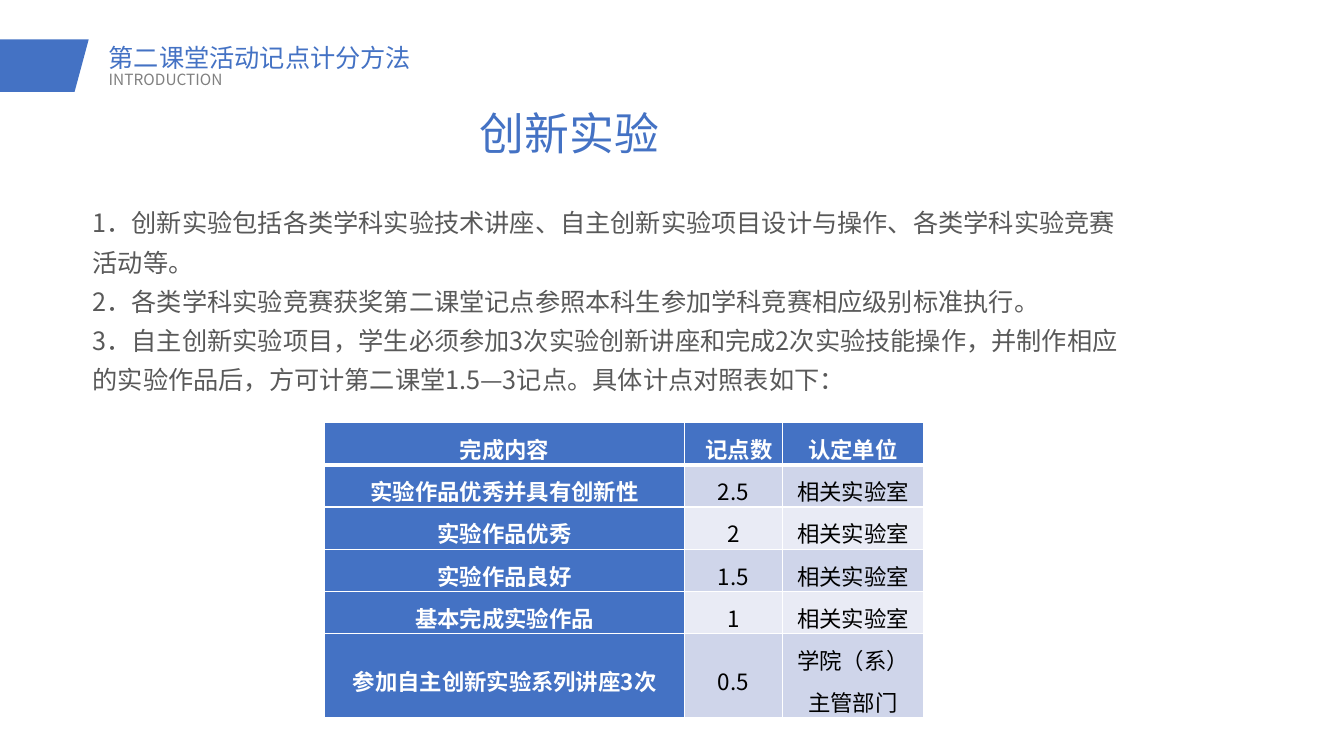
"""Build the slide on scoring points for innovation experiments."""
from lxml.etree import SubElement
from pptx import Presentation
from pptx.dml.color import RGBColor
from pptx.enum.text import MSO_ANCHOR, PP_ALIGN
from pptx.oxml.ns import qn
from pptx.util import Inches, Pt

FONT = "Noto Sans CJK SC"
BLUE, WHITE = "4472C4", "FFFFFF"


def color(code):
    """Turn a hex string into a colour."""
    return RGBColor.from_string(code)


def style(frame, size, ink, space, align=PP_ALIGN.LEFT, bold=False):
    """Format all the text in a frame."""
    for para in frame.paragraphs:
        para.alignment = align
        para.line_spacing = space
        for run in para.runs:
            run.font.size = Pt(size)
            run.font.bold = bold
            run.font.name = FONT
            run.font.color.rgb = color(ink)
            SubElement(run.font._element, qn("a:ea"), typeface=FONT)


deck = Presentation()
deck.slide_width, deck.slide_height = Inches(13.33), Inches(7.5)
slide = deck.slides.add_slide(deck.slide_layouts[6])
shapes = slide.shapes

pen = shapes.build_freeform(Inches(0), Inches(0.39), scale=1.0)
corners = [(0.88, 0.39), (0.74, 0.91), (0, 0.91)]
pen.add_line_segments([(Inches(x), Inches(y)) for x, y in corners])
flag = pen.convert_to_shape()
flag.shadow.inherit = False
flag.fill.solid()
flag.fill.fore_color.rgb = color(BLUE)
flag.line.fill.background()

rules = "\n".join([
    "1．创新实验包括各类学科实验技术讲座、自主创新实验项目设计与操作、各类学科实验竞赛活动等。",
    "2．各类学科实验竞赛获奖第二课堂记点参照本科生参加学科竞赛相应级别标准执行。",
    "3．自主创新实验项目，学生必须参加3次实验创新讲座和完成2次实验技能操作，并制作相应的实验作品后，方可计第二课堂1.5—3记点。具体计点对照表如下：",
])
texts = [
    ("第二课堂活动记点计分方法", (0.98, 0.4, 8.62, 0.47), 18, BLUE, 0.9, PP_ALIGN.LEFT, True),
    ("INTRODUCTION", (0.98, 0.67, 8.62, 0.33), 11, "808080", 0.9, PP_ALIGN.LEFT, True),
    (rules, (0.82, 1.92, 10.45, 1.98), 18, "595959", 1.3, PP_ALIGN.LEFT, True),
    ("创新实验", (4.66, 0.84, 1.98, 0.63), 32, BLUE, 1.3, PP_ALIGN.CENTER, False),
]
for words, place, size, ink, space, align, wrap in texts:
    frame = shapes.add_textbox(*map(Inches, place)).text_frame
    frame.word_wrap = wrap
    frame.text = words
    style(frame, size, ink, space, align)

LAB = "相关实验室"
rows = [
    ("完成内容", "记点数", "认定单位"),
    ("实验作品优秀并具有创新性", "2.5", LAB),
    ("实验作品优秀", "2", LAB),
    ("实验作品良好", "1.5", LAB),
    ("基本完成实验作品", "1", LAB),
    ("参加自主创新实验系列讲座3次", "0.5", "学院（系）主管部门"),
]
table = shapes.add_table(
    len(rows), 3, Inches(3.22), Inches(4.19), Inches(5.94), Inches(2.93)).table
for col, width in zip(table.columns, [3.57, 0.97, 1.4]):
    col.width = Inches(width)
for r, row in enumerate(rows):
    table.rows[r].height = Inches(0.83 if r == len(rows) - 1 else 0.42)
    for c, words in enumerate(row):
        cell = table.cell(r, c)
        head = r == 0 or c == 0
        cell.text = words
        cell.vertical_anchor = MSO_ANCHOR.MIDDLE
        cell.margin_left = cell.margin_right = Inches(0.07)
        cell.margin_top = cell.margin_bottom = 0
        style(cell.text_frame, 16, WHITE if head else "000000", Pt(30),
              PP_ALIGN.CENTER, head)
        props = cell._tc.get_or_add_tcPr()
        for side in "LRTB":
            thick = (r, side) in [(0, "B"), (1, "T")]
            line = SubElement(props, qn("a:ln" + side), w=str(Pt(3 if thick else 1)))
            fill = SubElement(line, qn("a:solidFill"))
            SubElement(fill, qn("a:srgbClr"), val=WHITE)
        cell.fill.solid()
        band = "CFD5EA" if r % 2 else "E9EBF5"
        cell.fill.fore_color.rgb = color(BLUE if head else band)
points = table.cell(0, 1).text_frame.paragraphs[0]
points._p.get_or_add_pPr().set("indent", str(Inches(0.11)))

deck.save("out.pptx")
